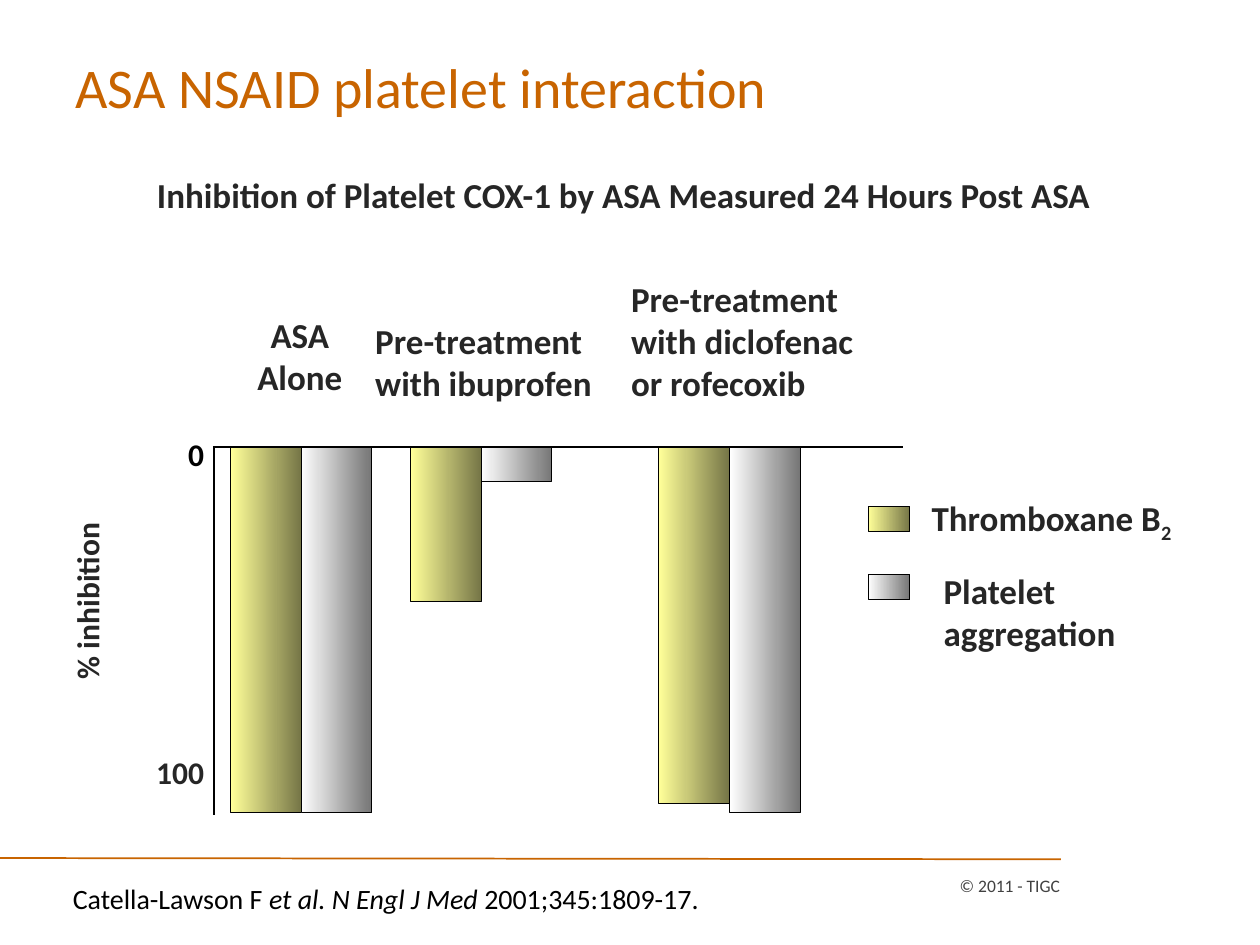
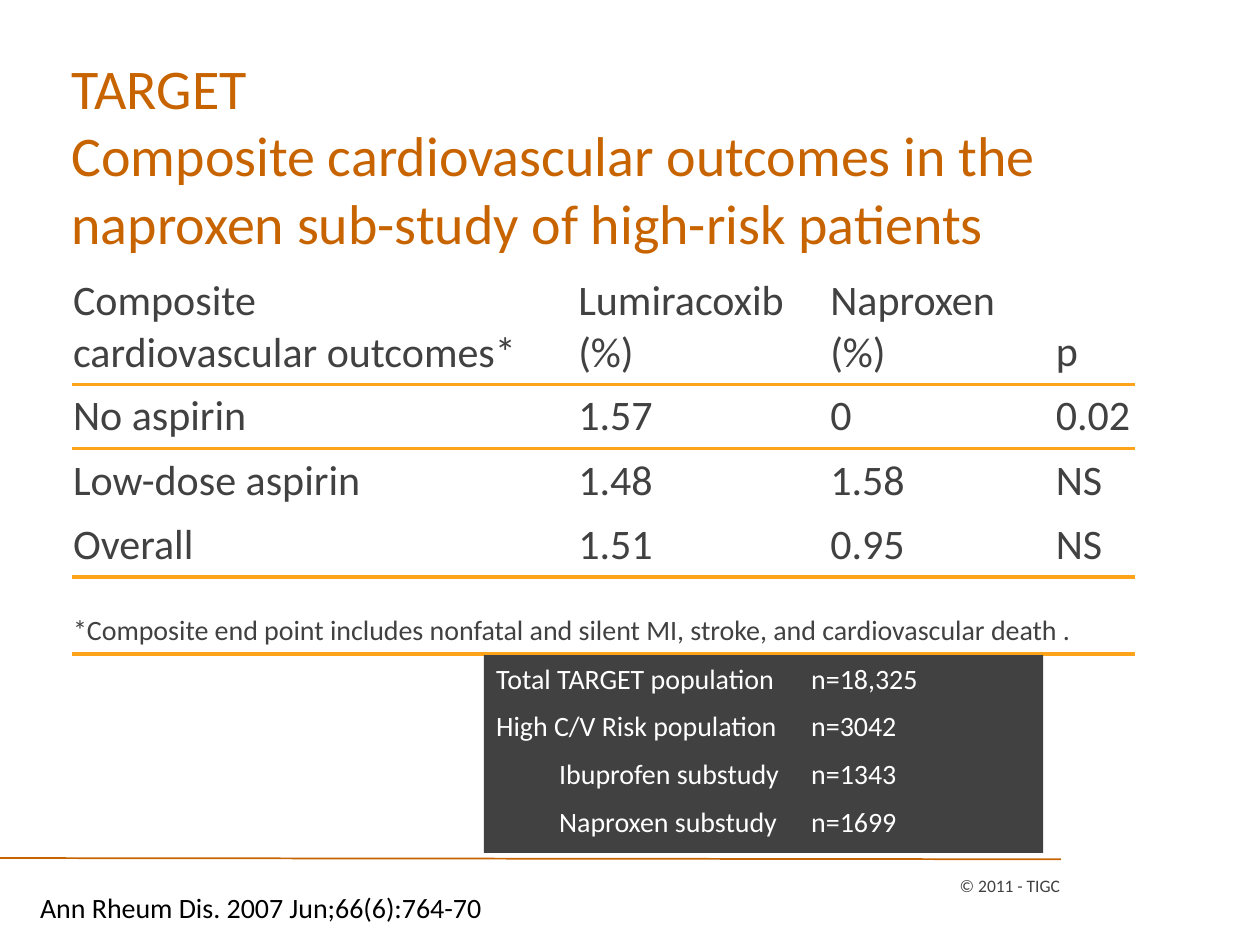
"""Build two slides on aspirin, NSAIDs and platelets."""
from dataclasses import dataclass, replace

import lxml.etree
import pptx
import pptx.dml.color
import pptx.enum.dml
import pptx.enum.shapes
import pptx.enum.text
import pptx.oxml.ns
import pptx.util

Inches = pptx.util.Inches
Pt = pptx.util.Pt
Align = pptx.enum.text.PP_ALIGN
Anchor = pptx.enum.text.MSO_ANCHOR
qn = pptx.oxml.ns.qn

FONT = "Calibri"
HUES = {
    "title": "C86400",
    "rule": "FFA31B",
    "body": "414141",
    "dark": "262626",
    "black": "000000",
    "white": "FFFFFF",
    "lemon": "FFFF99",
    "olive": "767647",
    "grey": "767676",
}
GOLD = ("lemon", "olive")
SILVER = ("white", "grey")


@dataclass(frozen=True)
class Style:
    size: int
    hue: str
    bold: bool = False
    align: Align = Align.LEFT
    before: int = 0


@dataclass(frozen=True)
class Run:
    text: str
    slant: bool = False
    base: int = 0


@dataclass(frozen=True)
class Label:
    at: tuple[float, float, float, float]
    lines: list[list[Run]]
    style: Style
    anchor: Anchor = Anchor.TOP
    inset: tuple[float, float, float, float] = (0.1, 0.05, 0.1, 0.05)
    turn: int = 0


@dataclass(frozen=True)
class Group:
    left: float
    gold: float
    silver: float


TITLE = Style(32, "title")
CITE = Style(16, "black")
HEAD = Style(20, "dark", True)
MID = replace(HEAD, align=Align.CENTER)
SCALE = Style(18, "dark", True, Align.RIGHT)
CELL = Style(24, "body")
NOTE = Style(16, "body")
PANEL = Style(16, "white", before=8)
MARK = Style(10, "body", align=Align.RIGHT)


def plain(*lines: str) -> list[list[Run]]:
    return [[Run(line)] for line in lines]


def tint(name: str) -> pptx.dml.color.RGBColor:
    return pptx.dml.color.RGBColor.from_string(HUES[name])


def span(at: tuple) -> list:
    return [Inches(side) for side in at]


def write(frame, lines: list[list[Run]], style: Style) -> None:
    frame.word_wrap = True
    for row, line in enumerate(lines):
        para = frame.paragraphs[0] if row == 0 else frame.add_paragraph()
        para.alignment = style.align
        if row and style.before:
            para.space_before = Pt(style.before)
        for part in line:
            run = para.add_run()
            run.text = part.text
            font = run.font
            font.name, font.size = FONT, Pt(style.size)
            font.bold, font.italic = style.bold, part.slant
            font.color.rgb = tint(style.hue)
            if part.base:
                run._r.get_or_add_rPr().set("baseline", str(part.base * 1000))


def add_label(slide, label: Label) -> None:
    box = slide.shapes.add_textbox(*span(label.at))
    box.rotation = label.turn
    frame = box.text_frame
    frame.vertical_anchor = label.anchor
    (frame.margin_left, frame.margin_top,
     frame.margin_right, frame.margin_bottom) = span(label.inset)
    write(frame, label.lines, label.style)


def add_line(slide, start: tuple, end: tuple, hue: str) -> None:
    line = slide.shapes.add_connector(
        pptx.enum.shapes.MSO_CONNECTOR.STRAIGHT, *span(start + end))
    line.line.color.rgb = tint(hue)
    line.line.width = Pt(1)
    lxml.etree.SubElement(line._element.spPr, qn("a:effectLst"))


def add_rect(slide, at: tuple):
    rect = slide.shapes.add_shape(
        pptx.enum.shapes.MSO_SHAPE.RECTANGLE, *span(at))
    rect.shadow.inherit = False
    return rect


def add_bar(slide, at: tuple, tones: tuple[str, str]) -> None:
    bar = add_rect(slide, at)
    bar.fill.gradient()
    bar.fill.gradient_angle = 0
    for stop, tone in zip(bar.fill.gradient_stops, tones):
        stop.color.rgb = tint(tone)
    bar.line.color.rgb = tint("black")
    bar.line.width = Pt(0.5)


def add_edge(cell, side: str) -> None:
    edge = lxml.etree.Element(qn(f"a:{side}"), w=str(Pt(2.25)))
    fill = lxml.etree.SubElement(edge, qn("a:solidFill"))
    lxml.etree.SubElement(fill, qn("a:srgbClr"), val=HUES["rule"])
    cell._tc.get_or_add_tcPr().insert(0, edge)


def new_slide(deck, title: Label, cite: Label):
    slide = deck.slides.add_slide(deck.slide_layouts[6])
    add_line(slide, (8.42, 6.82), (0, 6.81), "title")
    add_label(slide, title)
    add_label(slide, cite)
    add_label(slide, Label((5.34, 6.83, 3.17, 0.4), plain("© 2011 - TIGC"),
                           MARK, Anchor.MIDDLE))
    return slide


def draw_bars(deck) -> None:
    slide = new_slide(
        deck,
        Label((0.5, 0.3, 9, 0.77), plain("ASA NSAID platelet interaction"),
              TITLE, Anchor.MIDDLE),
        Label((0.48, 6.95, 5.32, 0.37),
              [[Run("Catella-Lawson F "), Run("et al. N Engl J Med", True),
                Run(" 2001;345:1809-17.")]], CITE))
    top, wide = 3.55, 0.56
    groups = [Group(1.83, 2.9, 2.9), Group(3.26, 1.22, 0.27),
              Group(5.23, 2.83, 2.9)]
    for group in groups:
        add_bar(slide, (group.left, top, wide, group.gold), GOLD)
        add_bar(slide, (group.left + wide, top, wide, group.silver), SILVER)
    for key, tones in enumerate((GOLD, SILVER)):
        add_bar(slide, (6.89, 4.02 + 0.54 * key, 0.33, 0.2), tones)
    add_line(slide, (1.7, top), (1.7, 6.47), "black")
    add_line(slide, (1.69, top), (7.17, top), "black")
    flush = (0, 0, 0, 0)
    labels = [
        Label((0.6, 1.33, 8.7, 0.44),
              plain("Inhibition of Platelet COX-1 by ASA "
                    "Measured 24 Hours Post ASA"), MID),
        Label((1.88, 2.44, 1, 0.77), plain("ASA", "Alone"), MID),
        Label((2.88, 2.49, 2.03, 0.77),
              plain("Pre-treatment", "with ibuprofen"), HEAD),
        Label((4.91, 2.15, 2.08, 1.11),
              plain("Pre-treatment", "with diclofenac", "or rofecoxib"), HEAD),
        Label((7.23, 3.89, 2.23, 0.44),
              [[Run("Thromboxane B"), Run("2", base=-25)]], MID),
        Label((7.39, 4.47, 1.68, 0.77),
              plain("Platelet", "aggregation"), HEAD),
        Label((-0.11, 4.57, 1.6, 0.4), plain("% inhibition"),
              replace(SCALE, align=Align.CENTER), turn=270),
        Label((1.12, 3.45, 0.5, 0.4), plain("0"),
              replace(SCALE, hue="black"), inset=flush),
        Label((1.12, 5.98, 0.5, 0.4), plain("100"), SCALE, inset=flush),
    ]
    for label in labels:
        add_label(slide, label)


def add_grid(slide) -> None:
    rows = [
        ("Composite\ncardiovascular outcomes*", "Lumiracoxib\n(%)",
         "Naproxen\n(%)", "p"),
        ("No aspirin", "1.57", "0", "0.02"),
        ("Low-dose aspirin", "1.48", "1.58", "NS"),
        ("Overall", "1.51", "0.95", "NS"),
        ("*Composite end point includes nonfatal and silent MI, stroke, "
         "and cardiovascular death .", "", "", ""),
    ]
    last = len(rows) - 1
    ruled = {0, last - 1, last}
    table = slide.shapes.add_table(
        len(rows), 4, *span((0.58, 2.14, 8.43, 3.01))).table
    table.first_row = table.horz_banding = False
    for col, wide in zip(table.columns, (4.01, 2, 1.79, 0.62)):
        col.width = Inches(wide)
    for row, high in zip(table.rows, (0.91, 0.51, 0.51, 0.51, 0.61)):
        row.height = Inches(high)
    table.cell(last, 0).merge(table.cell(last, 3))
    for row, texts in enumerate(rows):
        for col, text in enumerate(texts):
            cell = table.cell(row, col)
            cell.fill.background()
            cell.vertical_anchor = Anchor.BOTTOM
            cell.margin_left = cell.margin_right = 0
            cell.margin_top = cell.margin_bottom = Inches(0.05)
            if row in ruled:
                add_edge(cell, "lnB")
            if row - 1 in ruled:
                add_edge(cell, "lnT")
            if text:
                write(cell.text_frame, plain(*text.split("\n")),
                      NOTE if row == last else CELL)


def draw_trial(deck) -> None:
    slide = new_slide(
        deck,
        Label((0.47, 0.45, 8.83, 1.25),
              plain("TARGET", "Composite cardiovascular outcomes in the "
                    "naproxen sub-study of high-risk patients"),
              TITLE, Anchor.MIDDLE, (0.1, 0.35, 0.1, 0.05)),
        Label((0.22, 7.02, 5.01, 0.37),
              plain("Ann Rheum Dis. 2007 Jun;66(6):764-70"), CITE))
    add_grid(slide)
    panel = add_rect(slide, (3.84, 5.2, 4.44, 1.57))
    panel.fill.solid()
    panel.fill.fore_color.rgb = tint("body")
    panel.line.fill.background()
    panel.text_frame.vertical_anchor = Anchor.TOP
    write(panel.text_frame,
          plain("Total TARGET population\tn=18,325",
                "High C/V Risk population\tn=3042",
                "\tIbuprofen substudy\tn=1343",
                "\tNaproxen substudy\tn=1699"), PANEL)


def main() -> None:
    deck = pptx.Presentation()
    deck.slide_width, deck.slide_height = Inches(10), Inches(7.5)
    draw_bars(deck)
    draw_trial(deck)
    deck.save("out.pptx")


if __name__ == "__main__":
    main()
